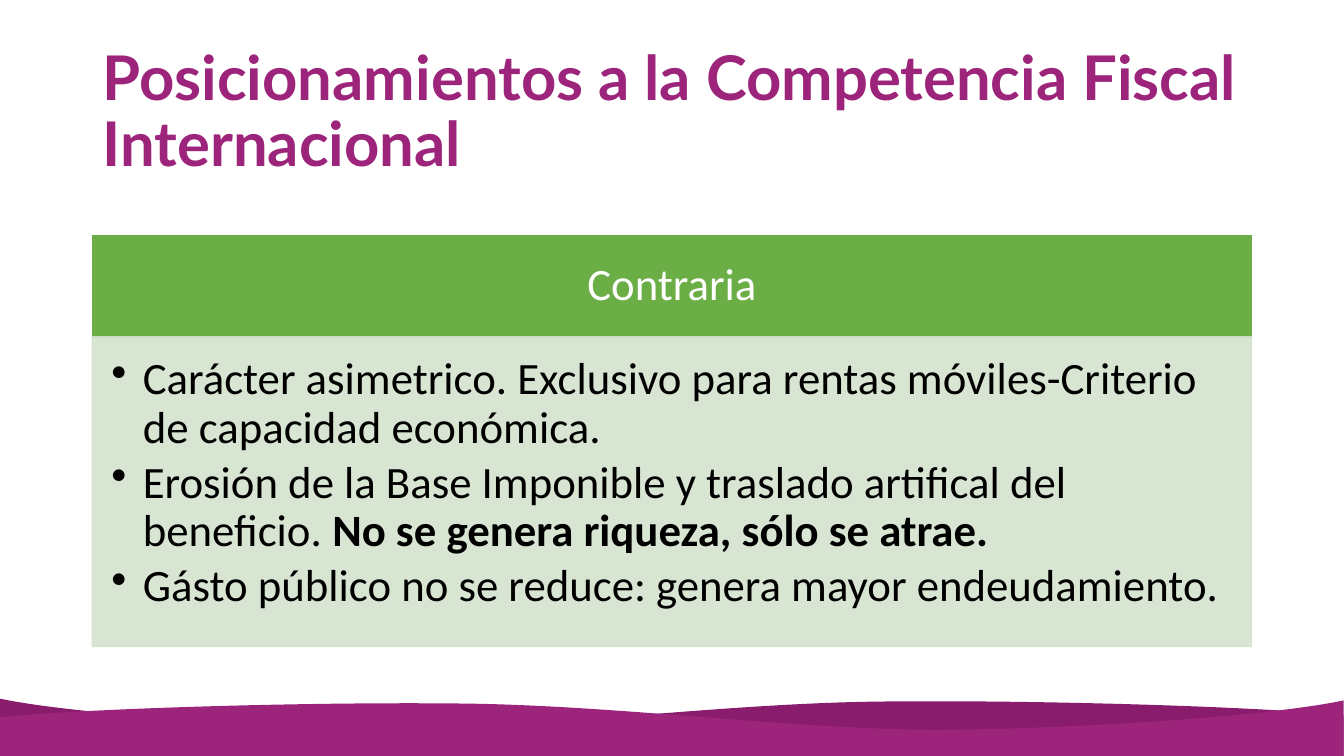
from pptx import Presentation
from pptx.dml.color import RGBColor
from pptx.enum.shapes import MSO_SHAPE as Shape
from pptx.enum.text import MSO_ANCHOR as Anchor, MSO_AUTO_SIZE as Fit, PP_ALIGN as Align
from pptx.oxml.ns import qn
from pptx.util import Cm, Pt
from lxml.etree import SubElement

PLUM = RGBColor(0x9C, 0x24, 0x7B)
DARK = RGBColor(0x89, 0x1C, 0x6C)
GREEN = RGBColor(0x6B, 0xAE, 0x45)
PALE = RGBColor(0xD4, 0xE3, 0xCF)
WHITE = RGBColor(0xFF, 0xFF, 0xFF)
BLACK = RGBColor(0, 0, 0)

LEFT, WIDTH = 2.33, 29.21

# Wave in cm: a start point, three cubic curves of three points, the base
START = (33.86, 18.03)
CREST = [
    (31.9, 17.81), (26.06, 17.63), (22.1, 17.68),
    (18.16, 17.73), (13.79, 18.34), (10.11, 18.34),
    (6.43, 18.31), (1.73, 17.98), (-0.03, 17.6),
]
BASE = [(-0.03, 19.02), (33.86, 19.05)]

POINTS = [
    ["Carácter asimetrico. Exclusivo para rentas móviles-Criterio de capacidad económica."],
    ["Erosión de la Base Imponible y traslado artifical del beneficio. ",
     "No se genera riqueza, sólo se atrae."],
    ["Gásto público no se reduce: genera mayor endeudamiento."],
]


def style(run, font, size, color, bold=False):
    run.font.name = font
    run.font.size = Pt(size)
    run.font.color.rgb = color
    run.font.bold = bold


def paint(shape, color, alpha=None):
    shape.shadow.inherit = False
    shape.fill.solid()
    shape.fill.fore_color.rgb = color
    shape.line.color.rgb = color
    shape.line.width = Pt(1)
    if alpha:
        for tint in shape._element.spPr.iter(qn("a:srgbClr")):
            SubElement(tint, qn("a:alpha"), val=str(alpha * 1000))


def bend(shape, count):
    """Turn the first count straight segments into cubic curves."""
    lines = list(shape._element.iter(qn("a:lnTo")))[:count]
    for i in range(0, count, 3):
        first, *rest = lines[i:i + 3]
        first.tag = qn("a:cubicBezTo")
        for line in rest:
            first.append(line[0])
            line.getparent().remove(line)


def add_wave(slide, color, flip=False):
    dots = [START] + CREST + BASE
    if flip:
        dots = [(33.83 - x, y + 0.05) for x, y in dots]
    spots = [(Cm(x), Cm(y)) for x, y in dots]
    pen = slide.shapes.build_freeform(*spots[0])
    pen.add_line_segments(spots[1:], close=True)
    wave = pen.convert_to_shape()
    bend(wave, len(CREST))
    paint(wave, color)
    wave.line.fill.background()


def add_title(slide, text):
    title = slide.shapes.title
    title.left, title.top = Cm(LEFT), Cm(1.02)
    title.width, title.height = Cm(WIDTH), Cm(3.68)
    frame = title.text_frame
    frame.text = text
    frame.word_wrap = True
    frame.auto_size = Fit.NONE
    frame.vertical_anchor = Anchor.MIDDLE
    para = frame.paragraphs[0]
    para.alignment = Align.LEFT
    para.line_spacing = 0.9
    style(para.runs[0], "Lato", 44, PLUM, True)


def add_panel(slide, top, height, color, pads, anchor, alpha=None):
    panel = slide.shapes.add_shape(
        Shape.RECTANGLE, Cm(LEFT), Cm(top), Cm(WIDTH), Cm(height))
    paint(panel, color, alpha)
    frame = panel.text_frame
    frame.word_wrap = True
    frame.vertical_anchor = anchor
    (frame.margin_left, frame.margin_top,
     frame.margin_right, frame.margin_bottom) = map(Cm, pads)
    return frame


def add_bullet(para, parts):
    para.alignment = Align.LEFT
    para.level = 1
    para.line_spacing = 0.9
    para.space_after = Pt(4.8)
    props = para._p.get_or_add_pPr()
    props.set("marL", str(Cm(0.79)))
    props.set("indent", str(-Cm(0.79)))
    SubElement(props, qn("a:buChar"), char="•")
    for i, part in enumerate(parts):
        run = para.add_run()
        run.text = part
        style(run, "Calibri", 32, BLACK, i > 0)


def main():
    deck = Presentation()
    deck.slide_width, deck.slide_height = Cm(33.87), Cm(19.05)
    slide = deck.slides.add_slide(deck.slide_layouts[5])

    # Waves along the foot
    add_wave(slide, DARK)
    add_wave(slide, PLUM, flip=True)

    # Title
    add_title(slide, "Posicionamientos a la Competencia Fiscal Internacional")

    # Green header
    head = add_panel(slide, 5.93, 2.56, GREEN, (0.64, 0.36, 0.64, 0.36), Anchor.MIDDLE)
    head.text = "Contraria"
    para = head.paragraphs[0]
    para.alignment = Align.CENTER
    para.line_spacing = 0.9
    style(para.runs[0], "Calibri", 32, WHITE)

    # Pale body with bullets
    body = add_panel(slide, 8.49, 7.8, PALE, (0.48, 0.48, 0.64, 0.71), Anchor.TOP, alpha=90)
    for i, parts in enumerate(POINTS):
        add_bullet(body.add_paragraph() if i else body.paragraphs[0], parts)

    deck.save("out.pptx")


if __name__ == "__main__":
    main()
